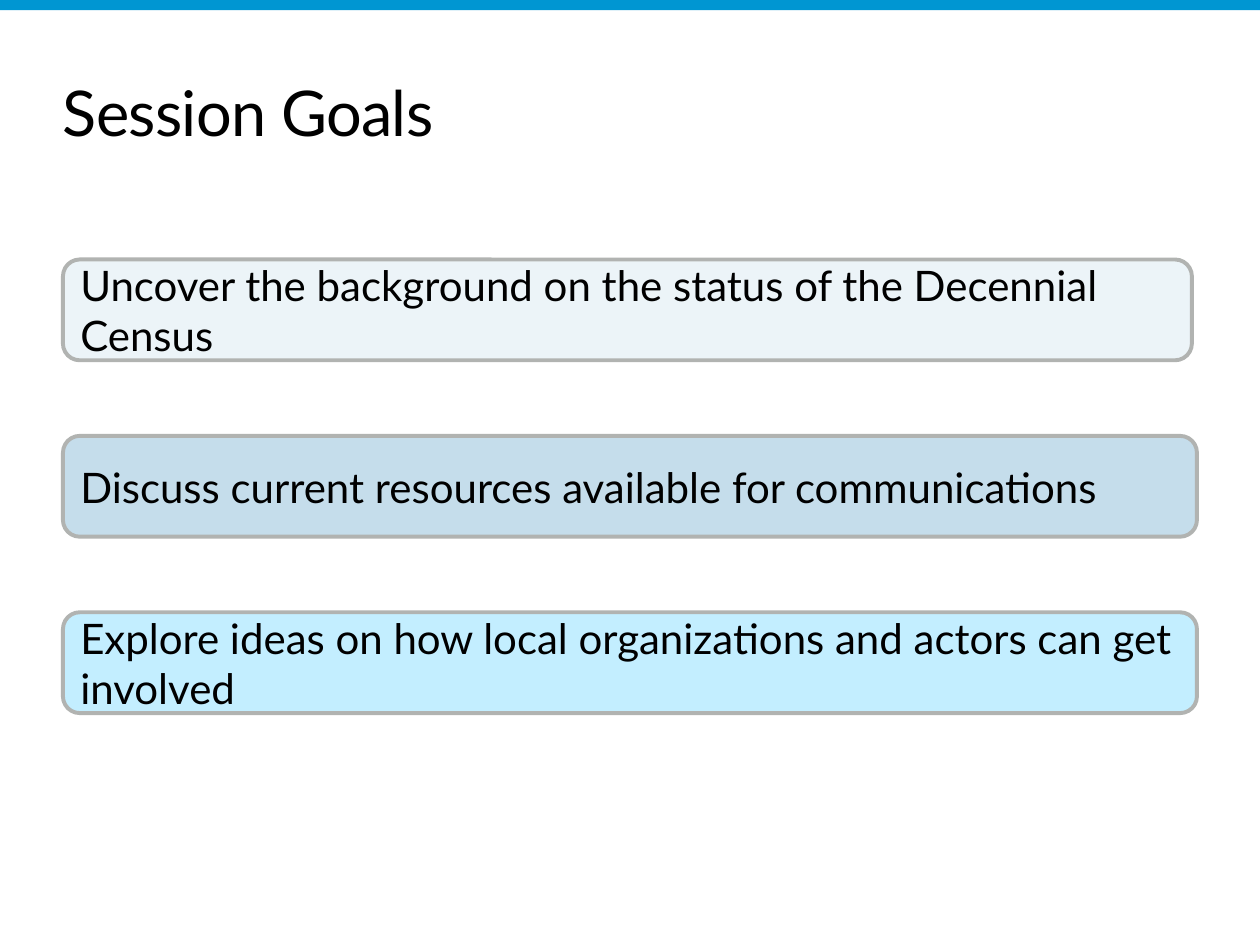
import pptx
import pptx.dml.color
import pptx.enum.shapes
import pptx.enum.text
import pptx.util
from pptx.util import Inches

SHAPES = pptx.enum.shapes.MSO_SHAPE
ANCHOR = pptx.enum.text.MSO_ANCHOR


def color(hex_code):
    return pptx.dml.color.RGBColor.from_string(hex_code)


class SlideBuilder:
    font = "Lato"
    ink = "000000"
    outline = "B1B3B1"

    def __init__(self, slide):
        self.slide = slide

    def add_text(self, shape, text, size):
        para = shape.text_frame.paragraphs[0]
        para.alignment = pptx.enum.text.PP_ALIGN.LEFT
        span = para.add_run()
        span.text = text
        span.font.name = self.font
        span.font.size = pptx.util.Pt(size)
        span.font.color.rgb = color(self.ink)
        return span

    def add_panel(self, preset, left, top, width, height, fill):
        panel = self.slide.shapes.add_shape(
            preset, Inches(left), Inches(top), Inches(width), Inches(height))
        panel.shadow.inherit = False
        panel.fill.solid()
        panel.fill.fore_color.rgb = color(fill)
        panel.line.fill.background()
        return panel

    def add_top_bar(self):
        self.add_panel(SHAPES.RECTANGLE, 0, 0, 10, 0.08, "0096D2")

    def add_title(self, text):
        box = self.slide.shapes.add_textbox(
            Inches(0.5), Inches(0.58), Inches(9), Inches(0.62))
        frame = box.text_frame
        frame.word_wrap = True
        frame.margin_left = frame.margin_right = 0
        frame.margin_top = frame.margin_bottom = 0
        span = self.add_text(box, text, 36)
        # Letter spacing, in hundredths of a point
        span._r.get_or_add_rPr().set("spc", "-40")

    def add_goal(self, text, top, width, fill):
        card = self.add_panel(SHAPES.ROUNDED_RECTANGLE, 0.5, top, width, 0.8, fill)
        card.line.color.rgb = color(self.outline)
        card.line.width = pptx.util.Pt(2.25)
        card.text_frame.word_wrap = True
        card.text_frame.vertical_anchor = ANCHOR.MIDDLE
        self.add_text(card, text, 24)


def main():
    deck = pptx.Presentation()
    deck.slide_width = Inches(10)
    deck.slide_height = Inches(7.5)
    builder = SlideBuilder(deck.slides.add_slide(deck.slide_layouts[6]))

    builder.add_top_bar()
    builder.add_title("Session Goals")
    goals = [
        ("Uncover the background on the status of the Decennial Census", 8.96, "ECF4F8"),
        ("Discuss current resources available for communications", 9, "C5DDEB"),
        ("Explore ideas on how local organizations and actors can get involved", 9, "C3EEFF"),
    ]
    first_top, pitch = 2.06, 1.4
    for row, (text, width, fill) in enumerate(goals):
        builder.add_goal(text, first_top + row * pitch, width, fill)

    deck.save("out.pptx")


if __name__ == "__main__":
    main()
